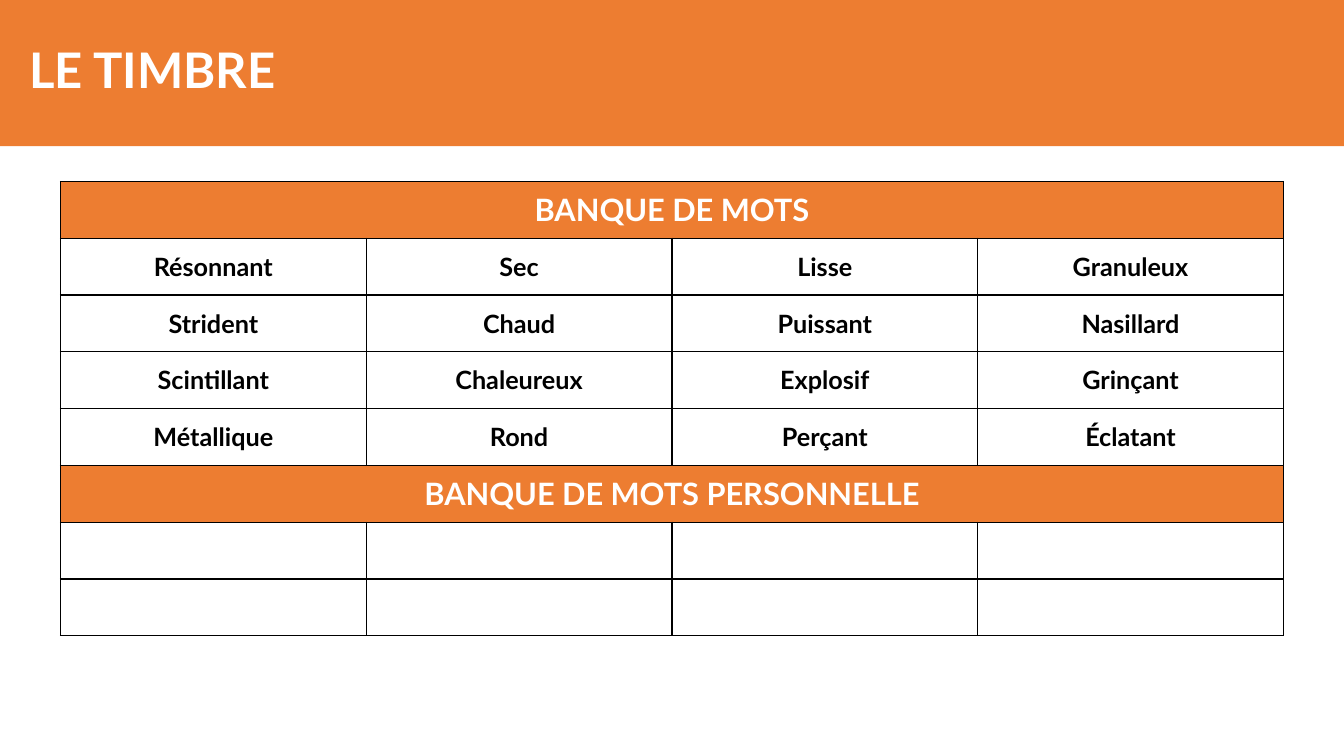
import pptx
import pptx.dml.color
import pptx.enum.text
import pptx.oxml
import pptx.oxml.ns
import pptx.util

Inches = pptx.util.Inches
RGBColor = pptx.dml.color.RGBColor
Align = pptx.enum.text.PP_ALIGN
Anchor = pptx.enum.text.MSO_ANCHOR

ORANGE = RGBColor(0xED, 0x7D, 0x31)
WHITE = RGBColor(0xFF, 0xFF, 0xFF)
BLACK = RGBColor(0, 0, 0)

COLS = 4
# A string is a band across the table; a list is a row of words.
ROWS = [
    "BANQUE DE MOTS",
    ["Résonnant", "Sec", "Lisse", "Granuleux"],
    ["Strident", "Chaud", "Puissant", "Nasillard"],
    ["Scintillant", "Chaleureux", "Explosif", "Grinçant"],
    ["Métallique", "Rond", "Perçant", "Éclatant"],
    "BANQUE DE MOTS PERSONNELLE",
    [""] * COLS,
    [""] * COLS,
]


def assign(item, values):
    for name, value in values.items():
        setattr(item, name, value)


def paint(item, color):
    item.fill.solid()
    item.fill.fore_color.rgb = color


def write(frame, text, size, color, align):
    para = frame.paragraphs[0]
    para.text = text
    para.alignment = align
    assign(para.font, {"name": "Lato", "size": pptx.util.Pt(size), "bold": True})
    para.font.color.rgb = color


def edge(cell):
    """Draw a thin line on all four sides of the cell."""
    props = cell._tc.get_or_add_tcPr()
    for side in "LRTB":
        props.append(pptx.oxml.parse_xml(
            f'<a:ln{side} {pptx.oxml.ns.nsdecls("a")} w="{pptx.util.Pt(1)}">'
            f'<a:solidFill><a:srgbClr val="{BLACK}"/></a:solidFill></a:ln{side}>'))


def add_title(slide, text):
    title = slide.shapes.title
    assign(title, {"left": 0, "top": 0,
                   "width": Inches(13.33), "height": Inches(1.45)})
    paint(title, ORANGE)
    frame = title.text_frame
    assign(frame, {"vertical_anchor": Anchor.MIDDLE, "word_wrap": True,
                   "auto_size": pptx.enum.text.MSO_AUTO_SIZE.NONE,
                   "margin_left": Inches(0.29)})
    write(frame, text, 35, WHITE, Align.LEFT)
    frame.paragraphs[0].line_spacing = 0.9


def add_bank(slide, rows):
    table = slide.shapes.add_table(
        len(rows), COLS, Inches(0.6), Inches(1.8),
        Inches(12.13), Inches(4.51)).table
    assign(table, {"first_row": False, "horz_banding": False})
    for r, row in enumerate(rows):
        band = isinstance(row, str)
        for c in range(COLS):
            cell = table.cell(r, c)
            edge(cell)
            paint(cell, ORANGE if band else WHITE)
            cell.vertical_anchor = Anchor.MIDDLE
            if not band:
                write(cell.text_frame, row[c], 18, BLACK, Align.CENTER)
        if band:
            first = table.cell(r, 0)
            first.merge(table.cell(r, COLS - 1))
            write(first.text_frame, row, 22, WHITE, Align.CENTER)


def main():
    deck = pptx.Presentation()
    assign(deck, {"slide_width": Inches(13.33), "slide_height": Inches(7.5)})
    slide = deck.slides.add_slide(deck.slide_layouts.get_by_name("Title Only"))
    add_title(slide, "LE TIMBRE")
    add_bank(slide, ROWS)
    deck.save("out.pptx")


if __name__ == "__main__":
    main()
